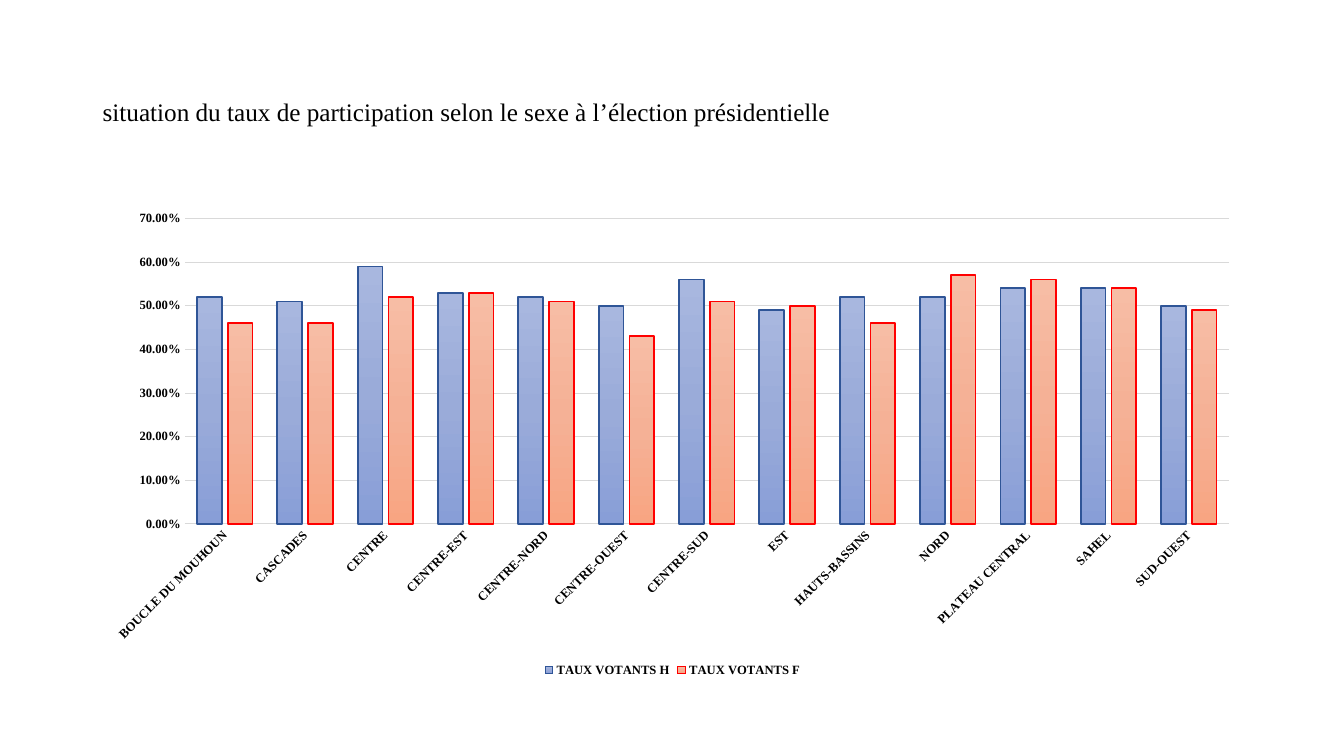
from dataclasses import dataclass

from lxml.etree import SubElement
from pptx import Presentation
from pptx.chart.data import CategoryChartData
from pptx.dml.color import RGBColor
from pptx.enum.chart import XL_CHART_TYPE, XL_LEGEND_POSITION, XL_TICK_MARK
from pptx.enum.text import MSO_ANCHOR
from pptx.oxml.ns import qn
from pptx.util import Inches, Pt


@dataclass(frozen=True)
class Theme:
    font: str = "Times New Roman"
    chart_font: str = "Calibri"
    text: str = "000000"
    grid: str = "D9D9D9"
    men_gradient: tuple = ("A8B7DF", "9AABD9", "889ED7")
    men_line: str = "2F5597"
    women_gradient: tuple = ("F7BDA5", "F5B196", "F8A582")
    women_line: str = "FF0000"
    title_size: float = 18
    chart_size: float = 10
    label_size: float = 9
    grid_width: float = 0.75
    bar_line_width: float = 1.25


REGIONS = (
    "BOUCLE DU MOUHOUN", "CASCADES", "CENTRE", "CENTRE-EST", "CENTRE-NORD",
    "CENTRE-OUEST", "CENTRE-SUD", "EST", "HAUTS-BASSINS", "NORD",
    "PLATEAU CENTRAL", "SAHEL", "SUD-OUEST",
)
TURNOUT = {
    "TAUX VOTANTS H": (0.52, 0.51, 0.59, 0.53, 0.52, 0.5, 0.56, 0.49, 0.52, 0.52, 0.54, 0.54, 0.5),
    "TAUX VOTANTS F": (0.46, 0.46, 0.52, 0.53, 0.51, 0.43, 0.51, 0.5, 0.46, 0.57, 0.56, 0.54, 0.49),
}


def style_font(font, name, size, color, bold=False):
    font.name = name
    font.size = Pt(size)
    font.bold = bold
    font.color.rgb = RGBColor.from_string(color)


def write_text(frame, text, *, line_spacing=1.0, **font_format):
    paragraph = frame.paragraphs[0]
    paragraph.line_spacing = line_spacing
    run = paragraph.add_run()
    run.text = text
    style_font(run.font, **font_format)


def style_line(line, color, width):
    line.color.rgb = RGBColor.from_string(color)
    line.width = Pt(width)


def fill_gradient(series, colors):
    fill = series.format.fill
    fill.gradient()
    fill.gradient_angle = 270
    stops = series.format.element.find(".//" + qn("a:gsLst")) if hasattr(series.format, "element") \
        else series._element.find(".//" + qn("a:gsLst"))
    for stop in list(stops):
        stops.remove(stop)
    for index, color in enumerate(colors):
        position = 100000 * index // (len(colors) - 1)
        stop = SubElement(stops, qn("a:gs"), pos=str(position))
        SubElement(stop, qn("a:srgbClr"), val=color)


class TurnoutSlide:
    def __init__(self, presentation, theme):
        self.theme = theme
        self.slide = presentation.slides.add_slide(presentation.slide_layouts[6])

    def title(self, text, left, top, width, height):
        heading = self.slide.shapes.add_textbox(
            Inches(left), Inches(top), Inches(width), Inches(height))
        frame = heading.text_frame
        frame.word_wrap = True
        frame.vertical_anchor = MSO_ANCHOR.MIDDLE
        write_text(frame, text, line_spacing=0.9, name=self.theme.font,
                   size=self.theme.title_size, color=self.theme.text)

    def label_font(self, font):
        style_font(font, self.theme.font, self.theme.label_size, self.theme.text, bold=True)

    def axis(self, axis):
        axis.major_tick_mark = axis.minor_tick_mark = XL_TICK_MARK.NONE
        self.label_font(axis.tick_labels.font)

    def chart(self, regions, turnout, left, top, width, height):
        theme = self.theme
        data = CategoryChartData(number_format="0.00%")
        data.categories = regions
        for name, rates in turnout.items():
            data.add_series(name, rates)
        chart = self.slide.shapes.add_chart(
            XL_CHART_TYPE.COLUMN_CLUSTERED, Inches(left), Inches(top),
            Inches(width), Inches(height), data).chart
        chart.has_title = False
        style_font(chart.font, theme.chart_font, theme.chart_size, theme.text)

        region_axis, rate_axis = chart.category_axis, chart.value_axis
        self.axis(region_axis)
        self.axis(rate_axis)
        style_line(region_axis.format.line, theme.grid, theme.grid_width)
        region_axis._element.find(qn("c:txPr")).find(qn("a:bodyPr")).set("rot", "-2700000")
        rate_axis.format.line.fill.background()
        style_line(rate_axis.major_gridlines.format.line, theme.grid, theme.grid_width)
        rate_axis.minimum_scale, rate_axis.maximum_scale = 0, 0.7
        rate_axis.major_unit = 0.1
        rate_axis.tick_labels.number_format = "0.00%"
        rate_axis.tick_labels.number_format_is_linked = False

        chart.has_legend = True
        chart.legend.position = XL_LEGEND_POSITION.BOTTOM
        chart.legend.include_in_layout = False
        self.label_font(chart.legend.font)

        plot = chart.plots[0]
        plot.gap_width, plot.overlap = 100, -24
        plot.vary_by_categories = False
        looks = ((theme.men_gradient, theme.men_line), (theme.women_gradient, theme.women_line))
        for series, (gradient, outline) in zip(plot.series, looks):
            series.invert_if_negative = False
            fill_gradient(series, gradient)
            style_line(series.format.line, outline, theme.bar_line_width)


def main():
    presentation = Presentation()
    presentation.slide_width = Inches(13.33)
    presentation.slide_height = Inches(7.5)
    page = TurnoutSlide(presentation, Theme())
    page.title("situation du taux de participation selon le sexe à l’élection présidentielle",
               0.92, 0.4, 11.5, 1.45)
    page.chart(REGIONS, TURNOUT, 0.92, 2, 11.5, 4.76)
    presentation.save("out.pptx")


if __name__ == "__main__":
    main()
